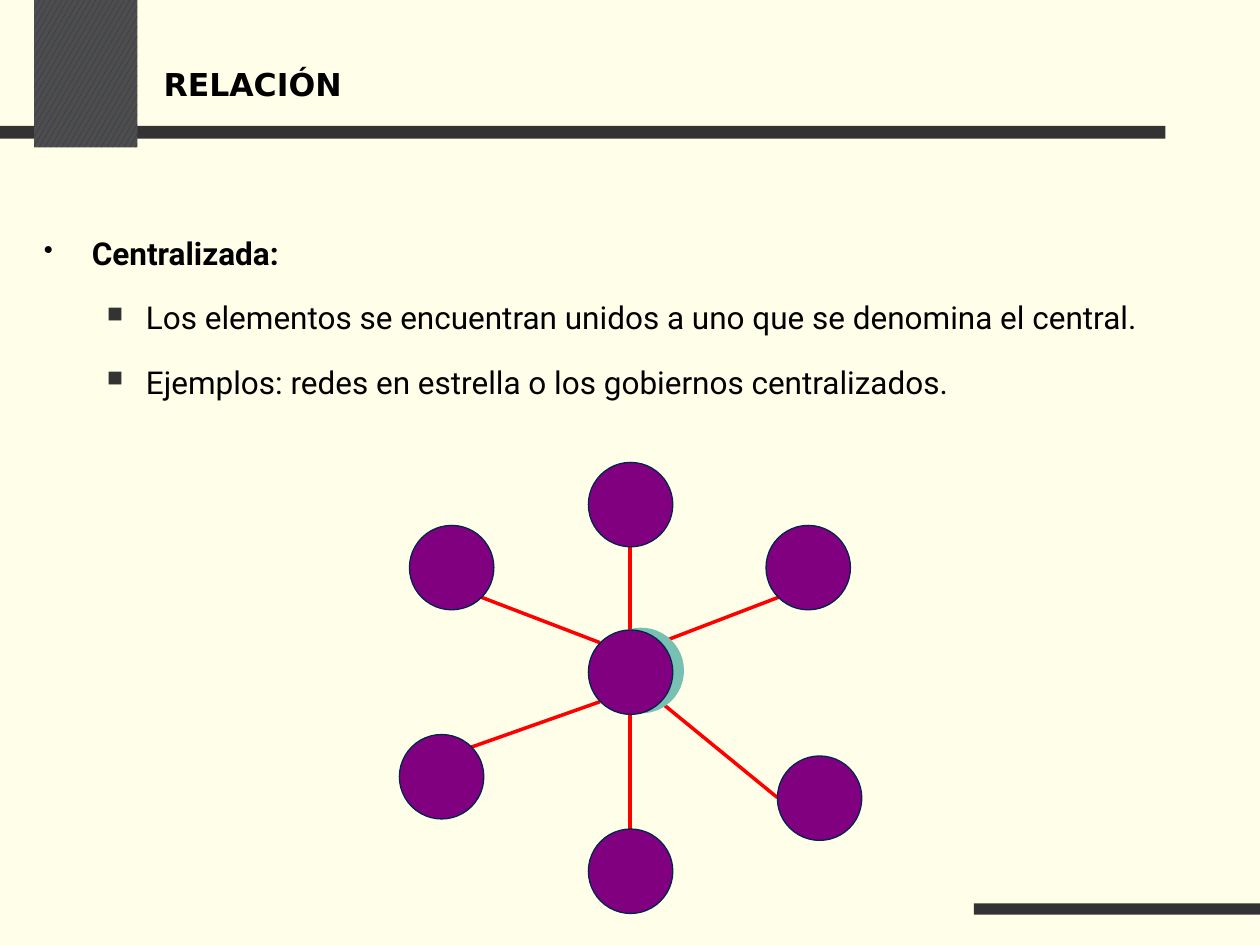
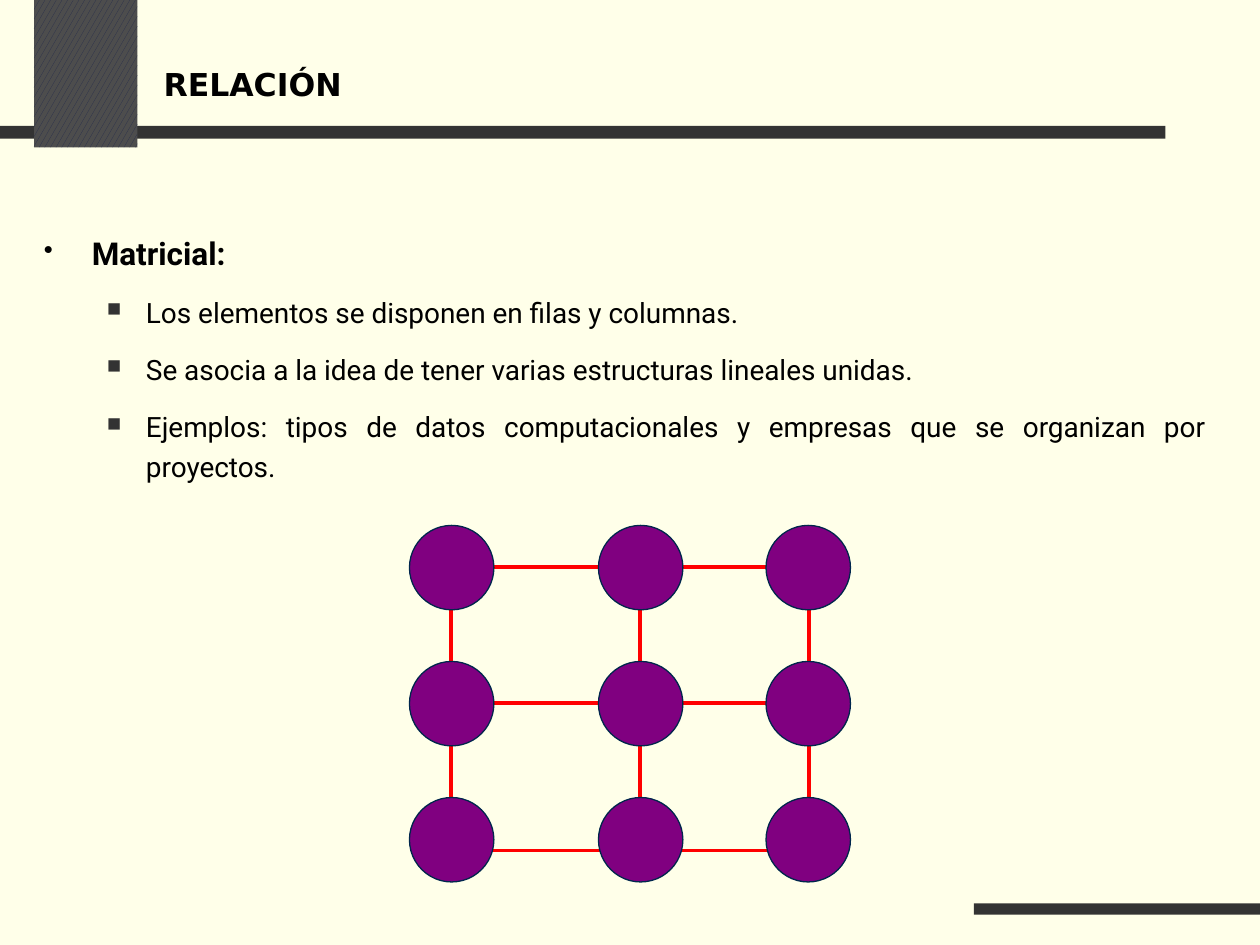
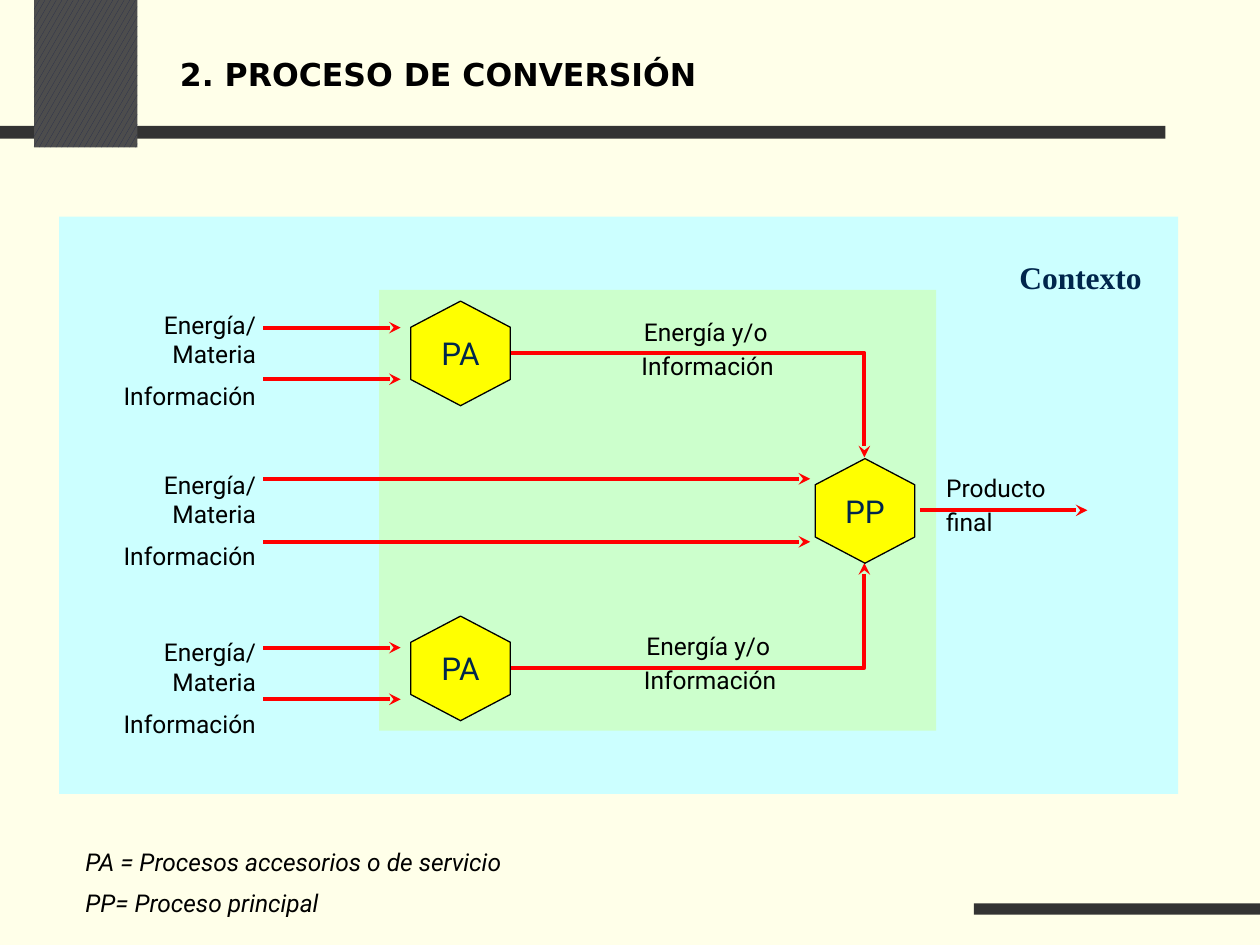
from pptx import Presentation
from pptx.dml.color import RGBColor
from pptx.enum.dml import MSO_PATTERN
from pptx.enum.shapes import MSO_CONNECTOR, MSO_SHAPE
from pptx.enum.text import MSO_ANCHOR, PP_ALIGN
from pptx.oxml import parse_xml
from pptx.oxml.ns import nsdecls
from pptx.util import Inches, Pt

rgb = RGBColor.from_string
NS = nsdecls("a")
BLACK, GREY, NAVY, RED = "000000", "333333", "00264C", "FF0000"
PURPLE, YELLOW = "800080", "FFFF00"
HEAD, BODY = "DejaVu Sans", "Roboto"
LEFT, MID, RIGHT, JUST = PP_ALIGN.LEFT, PP_ALIGN.CENTER, PP_ALIGN.RIGHT, PP_ALIGN.JUSTIFY
# Bullet: sign, size in percent, colour, level, left indent, hanging indent
DOT = ("•", 85, BLACK, 0, 0.38, 0.38)
BLOCK = ("■", 70, GREY, 1, 0.81, 0.31)


def box(slide, at, kind=None, fill=None, edge=None):
    """Add a plain shape, or a wrapping text box when no kind is given."""
    place = [Inches(n) for n in at]
    if kind is None:
        item = slide.shapes.add_textbox(*place)
        item.text_frame.word_wrap = True
        return item
    item = slide.shapes.add_shape(kind, *place)
    item.shadow.inherit = False
    item.fill.solid()
    item.fill.fore_color.rgb = rgb(fill)
    if edge:
        item.line.color.rgb = rgb(edge)
        item.line.width = Pt(0.75)
    else:
        item.line.fill.background()
    return item


def text(frame, words, size=14, font=BODY, color=BLACK, bold=False, italic=False,
         align=LEFT, lead=1.0, gap=0.5, bullet=None):
    """Write each line of words as a paragraph; gap is a share of the size."""
    for line in words.split("\n"):
        if frame.text:
            para = frame.add_paragraph()
            para.space_before = Pt(round(gap * size, 1))
        else:
            para = frame.paragraphs[0]
        para.alignment = align
        para.line_spacing = lead
        if bullet:
            sign, scale, tint, para.level, left, hang = bullet
            props = para._p.get_or_add_pPr()
            props.set("marL", str(Inches(left)))
            props.set("indent", str(-Inches(hang)))
            for part in (f'<a:buClr {NS}><a:srgbClr val="{tint}"/></a:buClr>',
                         f'<a:buSzPct {NS} val="{scale * 1000}"/>',
                         f'<a:buChar {NS} char="{sign}"/>'):
                props.append(parse_xml(part))
        run = para.add_run()
        run.text = line
        run.font.size, run.font.name = Pt(size), font
        run.font.bold, run.font.italic = bold, italic
        run.font.color.rgb = rgb(color)


deck = Presentation()
deck.slide_width, deck.slide_height = Inches(10), Inches(7.5)
back = deck.slide_master.background.fill
back.solid()
back.fore_color.rgb = rgb("FFFFE9")

# Shared bands and titles
RECT = MSO_SHAPE.RECTANGLE
slides = []
for title, at, low in [("RELACIÓN", (1.2, 0.58, 8.5, 0.58), True),
                       ("RELACIÓN", (1.2, 0.58, 8.5, 0.58), True),
                       ("2. PROCESO DE CONVERSIÓN", (1.33, 0.25, 8.07, 0.67), False)]:
    slide = deck.slides.add_slide(deck.slide_layouts[6])
    slides.append(slide)
    box(slide, (0, 1, 9.25, 0.1), RECT, GREY)
    tab = box(slide, (0.27, 0, 0.82, 1.17), RECT, GREY)
    tab.fill.patterned()
    tab.fill.pattern = MSO_PATTERN.LARGE_CONFETTI
    tab.fill.fore_color.rgb = rgb("262D4C")
    tab.fill.back_color.rgb = rgb("4D4D4D")
    box(slide, (7.73, 7.17, 2.27, 0.09), RECT, GREY)
    frame = box(slide, at).text_frame
    frame.vertical_anchor = MSO_ANCHOR.BOTTOM if low else MSO_ANCHOR.MIDDLE
    if low:
        frame.margin_bottom = Inches(0.34)
    text(frame, title, size=18, font=HEAD, bold=True)
star, grid, flow = slides

# Bulleted text
for slide, topic, size, points in [
    (star, "Centralizada:", 18,
     "Los elementos se encuentran unidos a uno que se denomina el central.\n"
     "Ejemplos: redes en estrella o los gobiernos centralizados."),
    (grid, "Matricial:", 16,
     "Los elementos se disponen en filas y columnas.\n"
     "Se asocia a la idea de tener varias estructuras lineales unidas.\n"
     "Ejemplos: tipos de datos computacionales y empresas que se organizan por proyectos."),
]:
    frame = box(slide, (0.25, 1.75, 9.42, 5.17)).text_frame
    text(frame, topic, size=18, bold=True, align=JUST, lead=1.2, bullet=DOT)
    text(frame, points, size=size, align=JUST, lead=1.2, gap=0.6, bullet=BLOCK)

# Context and system areas
box(flow, (0.47, 1.72, 8.88, 4.58), RECT, "CCFFFF")
box(flow, (3.01, 2.3, 4.42, 3.5), RECT, "CCFFCC")

# Links: start x, start y, end x, end y
spokes = [(5.24, 5.1, 6.18, 4.74), (5.24, 5.57, 6.17, 6.33), (5, 5.67, 5, 6.58),
          (4.76, 5.57, 3.74, 5.93), (4.76, 5.1, 3.82, 4.74), (5, 5, 5, 4.33)]
mesh = [(3.58, y, 6.42, y) for y in (4.5, 5.58, 6.75)]
mesh += [(x, 4.5, x, 6.75) for x in (3.58, 5.08, 6.42)]
flows = [(2.09, y, 3.18, y) for y in (2.6, 3.01, 5.14, 5.55)]
flows += [(2.09, y, 6.43, y) for y in (3.8, 4.3)]
flows += [(7.3, 4.05, 8.63, 4.05)]
bends = [(4.05, 2.8, 6.86, 3.63), (4.05, 5.3, 6.86, 4.47)]
for slide, ends, width, kind in [(star, spokes, 2, MSO_CONNECTOR.STRAIGHT),
                                 (grid, mesh, 2.25, MSO_CONNECTOR.STRAIGHT),
                                 (flow, flows, 2.25, MSO_CONNECTOR.STRAIGHT),
                                 (flow, bends, 2.25, MSO_CONNECTOR.ELBOW)]:
    for end in ends:
        link = slide.shapes.add_connector(kind, *[Inches(n) for n in end])
        link.line.color.rgb = rgb(RED)
        link.line.width = Pt(width)
        props = link.element.spPr
        props.append(parse_xml(f"<a:effectLst {NS}/>"))
        if slide is flow:
            props.xpath("a:ln")[0].append(parse_xml(f'<a:tailEnd {NS} type="stealth"/>'))
        if kind == MSO_CONNECTOR.ELBOW:
            props.xpath("a:prstGeom")[0].set("prst", "bentConnector2")

# Round nodes, the hub last
rim = [(4.67, 3.67), (3.25, 4.17), (3.17, 5.83), (4.67, 6.58), (6.17, 6), (6.08, 4.17)]
cells = [(x, y) for y in (4.17, 5.25, 6.33) for x in (3.25, 4.75, 6.08)]
for slide, spots in [(grid, cells), (star, rim + [(4.67, 5)])]:
    for x, y in spots:
        node = box(slide, (x, y, 0.67, 0.67), MSO_SHAPE.OVAL, PURPLE, NAVY)
glow = node.element.spPr.xpath("a:effectLst")[0]
glow.append(parse_xml(
    f'<a:outerShdw {NS} blurRad="0" dist="{Pt(6.1)}" dir="{351 * 60000}" algn="ctr" '
    'rotWithShape="0"><a:srgbClr val="78C0B2"/></a:outerShdw>'))

# Process hexagons
for name, x, y in [("PA", 3.24, 2.41), ("PA", 3.24, 4.91), ("PP", 6.45, 3.66)]:
    cell = box(flow, (x, y, 0.83, 0.79), MSO_SHAPE.HEXAGON, YELLOW, BLACK)
    cell.rotation = 90
    cell.adjustments[0] = 0.263
    frame = cell.text_frame
    frame.word_wrap = False
    frame.vertical_anchor = MSO_ANCHOR.MIDDLE
    frame._txBody.bodyPr.set("vert", "vert270")
    text(frame, name, size=18, color=NAVY, align=MID)

# Flow labels
for y in (2.41, 3.68, 5.01):
    text(box(flow, (0.59, y, 1.54, 0.69)).text_frame,
         "Energía/Materia\nInformación", align=RIGHT)
for x, y in [(3.91, 2.52), (3.93, 5.01)]:
    text(box(flow, (x, y, 2.33, 0.57)).text_frame,
         "Energía y/o \nInformación", align=RIGHT, lead=0.75)
text(box(flow, (7.41, 3.76, 1.08, 0.57)).text_frame, "Producto\nfinal", lead=0.75)
text(box(flow, (7.58, 2, 1.58, 0.4)).text_frame, "Contexto", size=18,
     font="Times New Roman", color=NAVY, bold=True, align=RIGHT)

# Key
text(box(flow, (0.58, 6.67, 7.25, 0.69)).text_frame,
     "PA = Procesos accesorios o de servicio\nPP= Proceso principal", italic=True)

deck.save("out.pptx")
